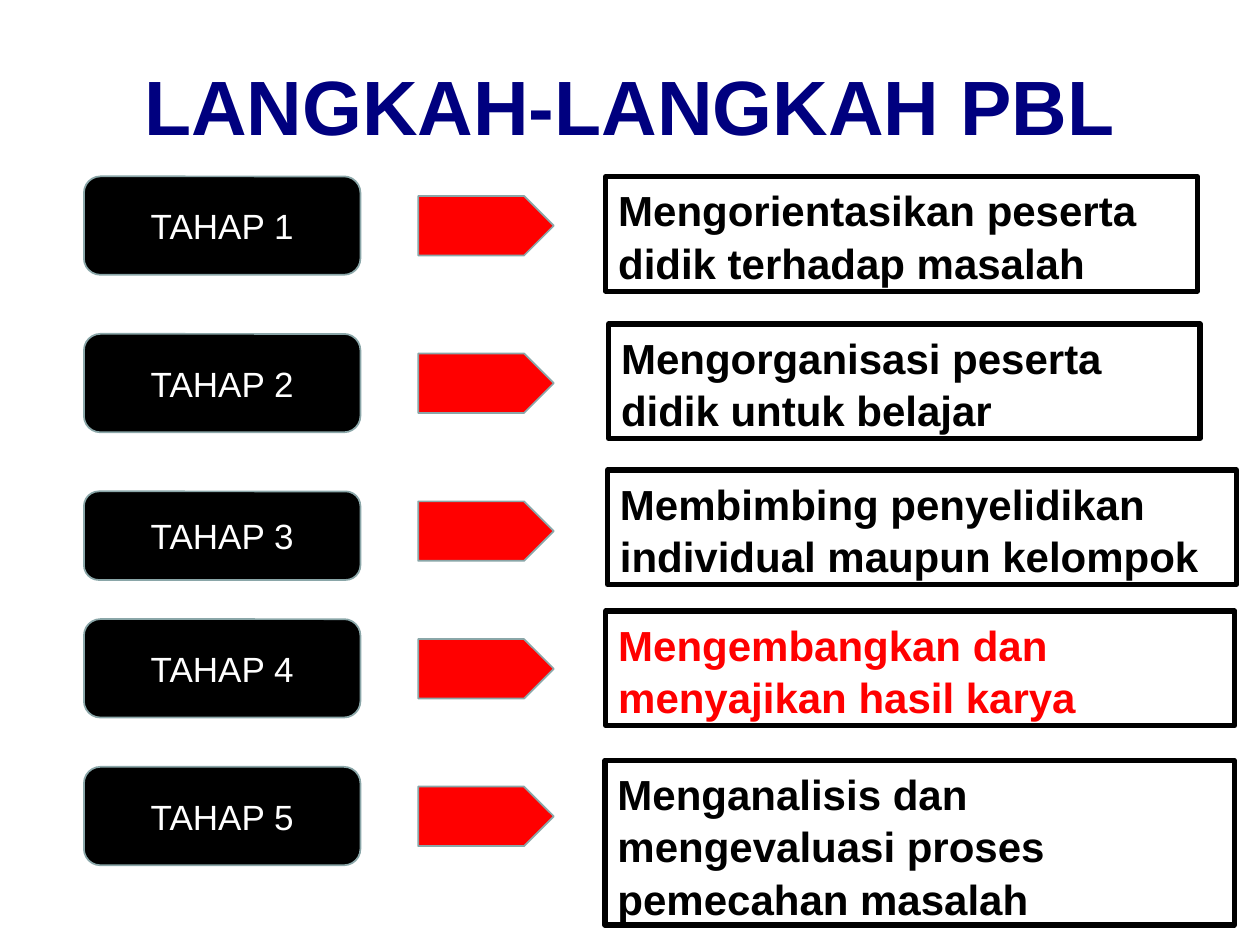
from pptx import Presentation
from pptx.dml.color import RGBColor
from pptx.enum.shapes import MSO_SHAPE as Shape
from pptx.enum.text import MSO_ANCHOR as Anchor, PP_ALIGN as Align
from pptx.util import Pt

BLACK, WHITE, RED, NAVY, EDGE = "000000", "FFFFFF", "FF0000", "00007F", "8AA6A8"

STAGE_LEFT, STAGE_WIDTH = 48, 158
ARROW_LEFT, ARROW_WIDTH, ARROW_HEIGHT = 239, 77.5, 34

# Stage top and height, arrow top, description box, description, text colour
STEPS = [
    (100.8, 56.2, 112, (346.2, 101, 338), "Mengorientasikan peserta didik terhadap masalah", BLACK),
    (190.8, 56.2, 202, (347.8, 185.2, 338), "Mengorganisasi peserta didik untuk belajar", BLACK),
    (280.8, 50.6, 286.5, (347.2, 268.6, 359.5), "Membimbing penyelidikan individual maupun kelompok", BLACK),
    (353.8, 56.2, 365.2, (346.2, 349.2, 359.5), "Mengembangkan dan menyajikan hasil karya", RED),
    (438.2, 56.2, 449.5, (345.8, 434.4, 359.5), "Menganalisis dan mengevaluasi proses pemecahan masalah", BLACK),
]
LINE_HEIGHT = 28.8


def color(hex_value):
    return RGBColor.from_string(hex_value)


def write(frame, text, hex_value, align, anchor, spacing=None, **font_format):
    frame.word_wrap = True
    frame.vertical_anchor = anchor
    paragraph = frame.paragraphs[0]
    paragraph.text = text
    paragraph.alignment = align
    if spacing:
        paragraph.line_spacing = spacing
    font = paragraph.runs[0].font
    font.color.rgb = color(hex_value)
    for name, value in {"name": "Arial", **font_format}.items():
        setattr(font, name, value)


def add_outlined(slide, kind, box, fill, edge, edge_width):
    outlined = slide.shapes.add_shape(kind, *map(Pt, box))
    outlined.shadow.inherit = False
    if fill:
        outlined.fill.solid()
        outlined.fill.fore_color.rgb = color(fill)
    else:
        outlined.fill.background()
    outlined.line.color.rgb = color(edge)
    outlined.line.width = Pt(edge_width)
    return outlined


def add_title(slide, text):
    title = slide.shapes.add_textbox(Pt(36), Pt(15), Pt(648), Pt(90))
    write(title.text_frame, text, NAVY, Align.CENTER, Anchor.MIDDLE, size=Pt(44), bold=True)


def add_stage(slide, number, top, height):
    stage = add_outlined(slide, Shape.ROUNDED_RECTANGLE,
                         (STAGE_LEFT, top, STAGE_WIDTH, height), BLACK, EDGE, 1)
    write(stage.text_frame, f"TAHAP {number}", WHITE, Align.CENTER, Anchor.MIDDLE, size=Pt(20))


def add_arrow(slide, top):
    arrow = add_outlined(slide, Shape.RIGHT_ARROW,
                         (ARROW_LEFT, top, ARROW_WIDTH, ARROW_HEIGHT), RED, EDGE, 1)
    arrow.adjustments[0] = 1
    arrow.adjustments[1] = 0.5


def add_description(slide, box, line_count, text, hex_value):
    height = line_count * LINE_HEIGHT + 7.8
    description = add_outlined(slide, Shape.RECTANGLE, (*box, height), None, BLACK, 3)
    write(description.text_frame, text, hex_value, Align.LEFT, Anchor.TOP,
          spacing=1.04, size=Pt(24), bold=True)


def main():
    deck = Presentation()
    deck.slide_width, deck.slide_height = Pt(720), Pt(540)
    slide = deck.slides.add_slide(deck.slide_layouts[6])

    add_title(slide, "LANGKAH-LANGKAH PBL")

    # One row per stage; the last description runs to three lines
    for number, (top, height, arrow_top, box, text, hex_value) in enumerate(STEPS, 1):
        add_stage(slide, number, top, height)
        add_arrow(slide, arrow_top)
        line_count = 3 if number == len(STEPS) else 2
        add_description(slide, box, line_count, text, hex_value)

    deck.save("out.pptx")


if __name__ == "__main__":
    main()
